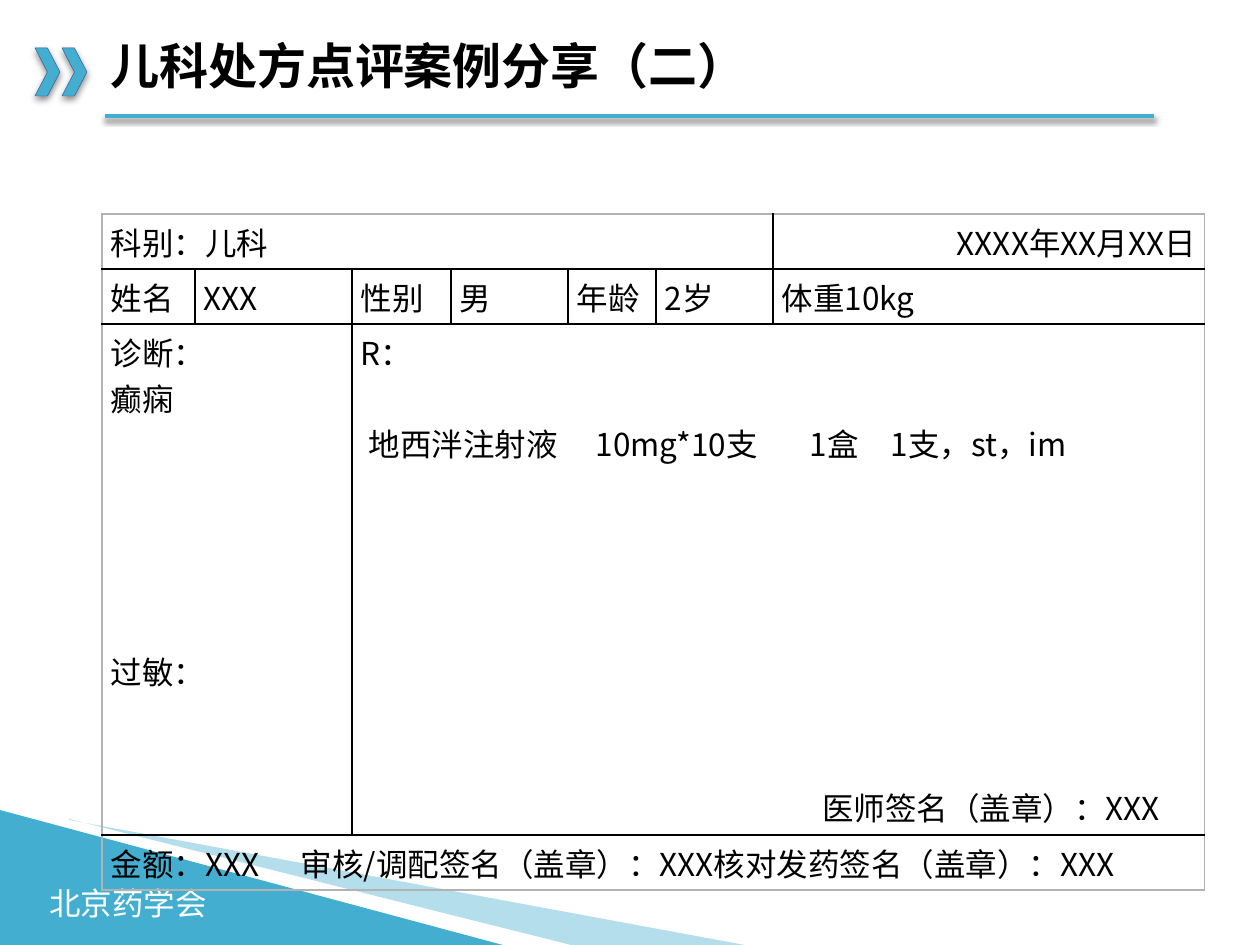
from dataclasses import dataclass

from lxml.etree import SubElement
from pptx import Presentation
from pptx.dml.color import RGBColor
from pptx.enum.shapes import MSO_CONNECTOR as Link, MSO_SHAPE as Shape
from pptx.enum.text import MSO_ANCHOR as Anchor, PP_ALIGN as Align
from pptx.oxml.ns import qn
from pptx.util import Pt

SCALE = 914400 / 126
FONT = "Noto Sans CJK SC"
BLUE, NAVY, BLACK, WHITE, GRAY = "44AED0", "325491", "000000", "FFFFFF", "B2B2B2"
LINE = 26.06  # height in points of one 18 pt text line


@dataclass(frozen=True)
class Para:
    text: str
    gap: float = 0  # text lines left free above
    tabs: tuple = ()  # (px, side) pairs
    align: Align = Align.LEFT


@dataclass(frozen=True)
class Field:
    row: int
    col: int
    span: int
    paras: tuple


def px(n: int) -> int:
    return round(n * SCALE)


def tint(code: str) -> RGBColor:
    return RGBColor.from_string(code)


def write(para, text: str, size: int = 18, color: str = BLACK, bold: bool = False,
          align: Align = Align.LEFT, gap: float = 0, tabs: tuple = ()) -> None:
    if tabs:
        stops = SubElement(para._p.get_or_add_pPr(), qn("a:tabLst"))
        for pos, side in tabs:
            SubElement(stops, qn("a:tab"), pos=str(px(pos)), algn=side)
    para.alignment = align
    if gap:
        para.space_before = Pt(round(gap * LINE))
    run = para.add_run()
    run.text = text
    font = run.font
    font.size, font.bold = Pt(size), bold
    font.color.rgb = tint(color)
    font.name = FONT
    SubElement(run._r.get_or_add_rPr(), qn("a:ea"), typeface=FONT)


def label(slide, box: tuple, text: str, wrap: bool = True,
          anchor: Anchor = Anchor.TOP, space: float = 1.0, **style) -> None:
    frame = slide.shapes.add_textbox(*map(px, box)).text_frame
    frame.word_wrap, frame.vertical_anchor = wrap, anchor
    frame.paragraphs[0].line_spacing = space
    write(frame.paragraphs[0], text, **style)


def paint(shape, alpha: int = 100, edge: str = "") -> None:
    shape.shadow.inherit = False
    shape.fill.solid()
    shape.fill.fore_color.rgb = tint(BLUE)
    if alpha < 100:
        code = shape.fill._xPr.find(".//" + qn("a:srgbClr"))
        SubElement(code, qn("a:alpha"), val=str(alpha * 1000))
    if edge:
        shape.line.color.rgb = tint(edge)
        shape.line.width = Pt(0.25)
    else:
        shape.line.fill.background()


def shade(shape, color: str, alpha: int, blur: int) -> None:
    props = shape._element.spPr
    fx = props.find(qn("a:effectLst"))
    if fx is None:
        fx = SubElement(props, qn("a:effectLst"))
    drop = SubElement(fx, qn("a:outerShdw"), blurRad=str(Pt(blur)), dist=str(Pt(2)),
                      dir="5400000", algn="t", rotWithShape="0")
    code = SubElement(drop, qn("a:srgbClr"), val=color)
    SubElement(code, qn("a:alpha"), val=str(alpha * 1000))


def border(cell, colors: dict) -> None:
    props = cell._tc.get_or_add_tcPr()
    for side, color in colors.items():
        line = SubElement(props, qn("a:ln" + side), w=str(Pt(1)))
        fill = SubElement(line, qn("a:solidFill"))
        SubElement(fill, qn("a:srgbClr"), val=color)


def fill_in(table, field: Field, rows: int, cols: int) -> None:
    row, end = field.row, field.col + field.span
    colors = {"L": BLACK if field.col else GRAY, "R": BLACK if end < cols else GRAY,
              "T": BLACK if row else GRAY, "B": BLACK if row + 1 < rows else GRAY}
    for col in range(field.col, end):
        cell = table.cell(row, col)
        border(cell, colors)
        cell.fill.background()
    cell = table.cell(row, field.col)
    if field.span > 1:
        cell.merge(table.cell(row, end - 1))
    cell.margin_left = cell.margin_right = px(9)
    cell.margin_top = cell.margin_bottom = px(5)
    frame = cell.text_frame
    for i, item in enumerate(field.paras):
        para = frame.add_paragraph() if i else frame.paragraphs[0]
        write(para, item.text, gap=item.gap, tabs=item.tabs, align=item.align)


COLS = (93, 157, 99, 117, 88, 117, 432)
ROWS = (55, 55, 511, 55)
PATIENT = ("姓名", "XXX", "性别", "男", "年龄", "2岁", "体重10kg")
FIELDS = [
    Field(0, 0, 6, (Para("科别：儿科"),)),
    Field(0, 6, 1, (Para("XXXX年XX月XX日", align=Align.RIGHT),)),
    *(Field(1, i, 1, (Para(text),)) for i, text in enumerate(PATIENT)),
    Field(2, 0, 2, (Para("诊断："), Para("癫痫"), Para("过敏：", gap=5))),
    Field(2, 2, 5, (
        Para("R："),
        Para("\t地西泮注射液\t10mg*10支\t1盒\t1支，st，im", gap=1,
             tabs=((8, "l"), (235, "l"), (449, "l"), (530, "l"))),
        Para("\t医师签名（盖章）：XXX", gap=7, tabs=((799, "r"),)))),
    Field(3, 0, 7, (Para("金额：XXX\t审核/调配签名（盖章）：XXX核对发药签名（盖章）：XXX",
                         tabs=((190, "l"),)),)),
]


def main() -> None:
    deck = Presentation()
    deck.slide_width, deck.slide_height = px(1260), px(945)
    slide = deck.slides.add_slide(deck.slide_layouts[6])
    shapes = slide.shapes

    # Rule under the title
    rule = shapes.add_connector(Link.STRAIGHT, px(1154), px(116), px(105), px(116))
    rule.line.color.rgb = tint(BLUE)
    rule.line.width = Pt(2.25)
    shade(rule, "808080", 100, 3)

    # Corner wedge, society name and pale ray
    wedge = shapes.add_shape(Shape.ISOSCELES_TRIANGLE, *map(px, (0, 810, 503, 135)))
    wedge.adjustments[0] = 0
    paint(wedge)
    label(slide, (37, 878, 184, 50), "北京药学会", wrap=False, color=WHITE)
    pen = shapes.build_freeform(69, 820, scale=SCALE)
    pen.add_line_segments([(750, 946), (575, 946), (69, 819)], close=True)
    paint(pen.convert_to_shape(), alpha=40)

    # Chevrons and title
    for left in (62, 35):
        mark = shapes.add_shape(Shape.CHEVRON, *map(px, (left, 48, 25, 48)))
        mark.adjustments[0] = 0.5
        paint(mark, edge=NAVY)
        shade(mark, BLACK, 46, 4)
    label(slide, (98, 28, 963, 82), "儿科处方点评案例分享（二）",
          anchor=Anchor.MIDDLE, space=0.9, size=28, bold=True)

    # Prescription form
    box = (102, 214, sum(COLS), sum(ROWS))
    table = shapes.add_table(len(ROWS), len(COLS), *map(px, box)).table
    table.first_row = table.horz_banding = False
    for col, width in zip(table.columns, COLS):
        col.width = px(width)
    for row, height in zip(table.rows, ROWS):
        row.height = px(height)
    for field in FIELDS:
        fill_in(table, field, len(ROWS), len(COLS))

    deck.save("out.pptx")


if __name__ == "__main__":
    main()
